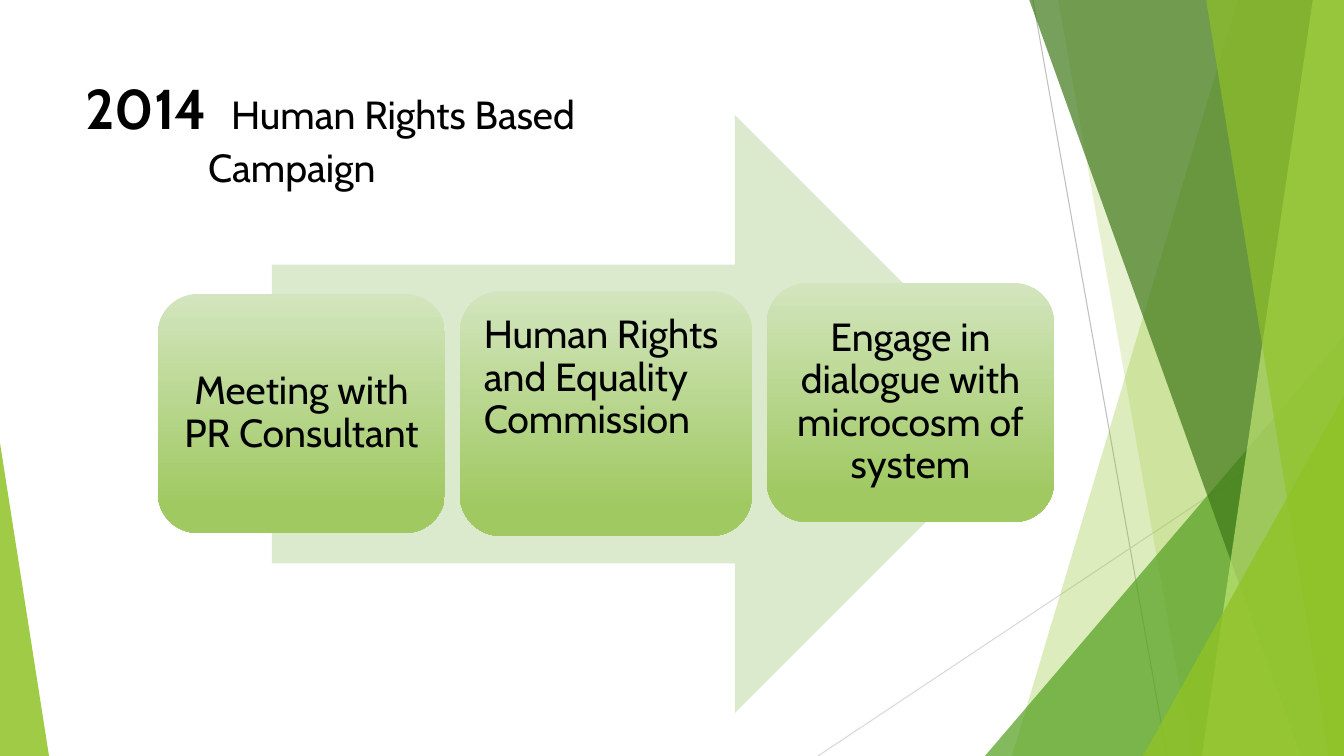
from dataclasses import dataclass

from lxml import etree
from pptx import Presentation
from pptx.dml.color import RGBColor
from pptx.enum.shapes import MSO_CONNECTOR, MSO_SHAPE
from pptx.enum.text import MSO_ANCHOR, PP_ALIGN
from pptx.oxml.ns import qn
from pptx.util import Pt

EMU_PER_PX = 914400 / 100.8
WIDTH, HEIGHT = 1344, 756


@dataclass(frozen=True)
class Theme:
    font: str = "Cabin"
    text: str = "000000"
    lime: str = "90C226"
    green: str = "54A021"
    forest: str = "3F7819"
    pale_lime: str = "C0E474"
    arrow: str = "DBE9CD"
    box_top: str = "D3E5BE"
    box_bottom: str = "A0C962"
    year_size: int = 40
    gap_size: int = 36
    body_size: int = 28


theme = Theme()


def px(*lengths):
    """Turn pixel lengths into a list of EMU values."""
    return [round(length * EMU_PER_PX) for length in lengths]


def fill_plain(shape, color, opacity=100):
    """Give a shape a flat fill with no outline or shadow."""
    shape.shadow.inherit = False
    shape.line.fill.background()
    shape.fill.solid()
    shape.fill.fore_color.rgb = RGBColor.from_string(color)
    if opacity < 100:
        color_element = shape.fill._xPr.find(qn("a:solidFill"))[0]
        etree.SubElement(color_element, qn("a:alpha"), val=str(opacity * 1000))


presentation = Presentation()
presentation.slide_width, presentation.slide_height = px(WIDTH, HEIGHT)
slide = presentation.slides.add_slide(presentation.slide_layouts[5])
shapes = slide.shapes

# Background lines
for ends, color in (((1033, 0, 1167, 756), "BFBFBF"), ((1344, 406, 818, 756), "D9D9D9")):
    line = shapes.add_connector(MSO_CONNECTOR.STRAIGHT, *px(*ends))
    line.line.color.rgb = RGBColor.from_string(color)
    line.line.width = Pt(0.75)
    etree.SubElement(line._element.spPr, qn("a:effectLst"))

# Translucent facets, back to front: a band is (top left x, bottom left x) and
# runs to the right edge; a triangle is (left, top, width, apex) and runs to the bottom
facets = (
    ("band", (1238, 1012), theme.lime, 30),
    ("band", (1058, 1192), theme.lime, 20),
    ("triangle", (985, 336, 359, 1), theme.green, 72),
    ("band", (1029, 1301), theme.forest, 70),
    ("band", (1313, 1202), theme.pale_lime, 70),
    ("band", (1206, 1329), theme.lime, 65),
    ("triangle", (1143, 396, 201, 1), theme.lime, 80),
    ("triangle", (0, 443, 49, 0), theme.lime, 85),
)
for kind, geometry, color, opacity in facets:
    if kind == "band":
        top_x, bottom_x = geometry
        outline = shapes.build_freeform(top_x, -1, scale=EMU_PER_PX)
        outline.add_line_segments([(WIDTH, -1), (WIDTH, HEIGHT), (bottom_x, HEIGHT)])
        facet = outline.convert_to_shape()
    else:
        left, top, width, apex = geometry
        facet = shapes.add_shape(
            MSO_SHAPE.ISOSCELES_TRIANGLE, *px(left, top, width, HEIGHT - top)
        )
        facet.adjustments[0] = apex
    fill_plain(facet, color, opacity)

# Title
title = shapes.title
title.left, title.top, title.width, title.height = px(75, 68, 948, 145)
title_frame = title.text_frame
title_frame.word_wrap = True
title_frame.vertical_anchor = MSO_ANCHOR.TOP
first_line = title_frame.paragraphs[0]
second_line = title_frame.add_paragraph()
second_line.space_before = Pt(2)
second_line._p.get_or_add_pPr().set("marL", str(px(123)[0]))
for paragraph, text, size, bold in (
    (first_line, "2014 ", theme.year_size, True),
    (first_line, " ", theme.gap_size, False),
    (first_line, "Human Rights Based", theme.body_size, False),
    (second_line, "Campaign", theme.body_size, False),
):
    paragraph.alignment = PP_ALIGN.LEFT
    run = paragraph.add_run()
    run.text = text
    run.font.name = theme.font
    run.font.size = Pt(size)
    run.font.bold = bold
    run.font.color.rgb = RGBColor.from_string(theme.text)

# Process arrow and its steps
arrow = shapes.add_shape(MSO_SHAPE.RIGHT_ARROW, *px(272, 115, 762, 598))
fill_plain(arrow, theme.arrow)

steps = (
    ("Meeting with PR Consultant", (158, 294, 287, 239), PP_ALIGN.CENTER, MSO_ANCHOR.MIDDLE),
    ("Human Rights and Equality Commission", (460, 291, 292, 245), PP_ALIGN.LEFT, MSO_ANCHOR.TOP),
    ("Engage in dialogue with microcosm of system", (767, 283, 287, 239),
     PP_ALIGN.CENTER, MSO_ANCHOR.MIDDLE),
)
for text, bounds, alignment, anchor in steps:
    box = shapes.add_shape(MSO_SHAPE.ROUNDED_RECTANGLE, *px(*bounds))
    box.shadow.inherit = False
    box.line.fill.background()
    box.fill.gradient()
    box.fill.gradient_angle = 270
    stops = zip(box.fill.gradient_stops, (theme.box_top, theme.box_bottom), (0, 0.88))
    for stop, color, position in stops:
        stop.color.rgb = RGBColor.from_string(color)
        stop.position = position

    frame = box.text_frame
    frame.text = text
    frame.word_wrap = True
    frame.vertical_anchor = anchor
    frame.margin_left, frame.margin_top, frame.margin_right, frame.margin_bottom = px(12, 12, 12, 12)
    paragraph = frame.paragraphs[0]
    paragraph.alignment = alignment
    paragraph.line_spacing = 0.9
    font = paragraph.runs[0].font
    font.name = theme.font
    font.size = Pt(theme.body_size)
    font.color.rgb = RGBColor.from_string(theme.text)

presentation.save("out.pptx")
